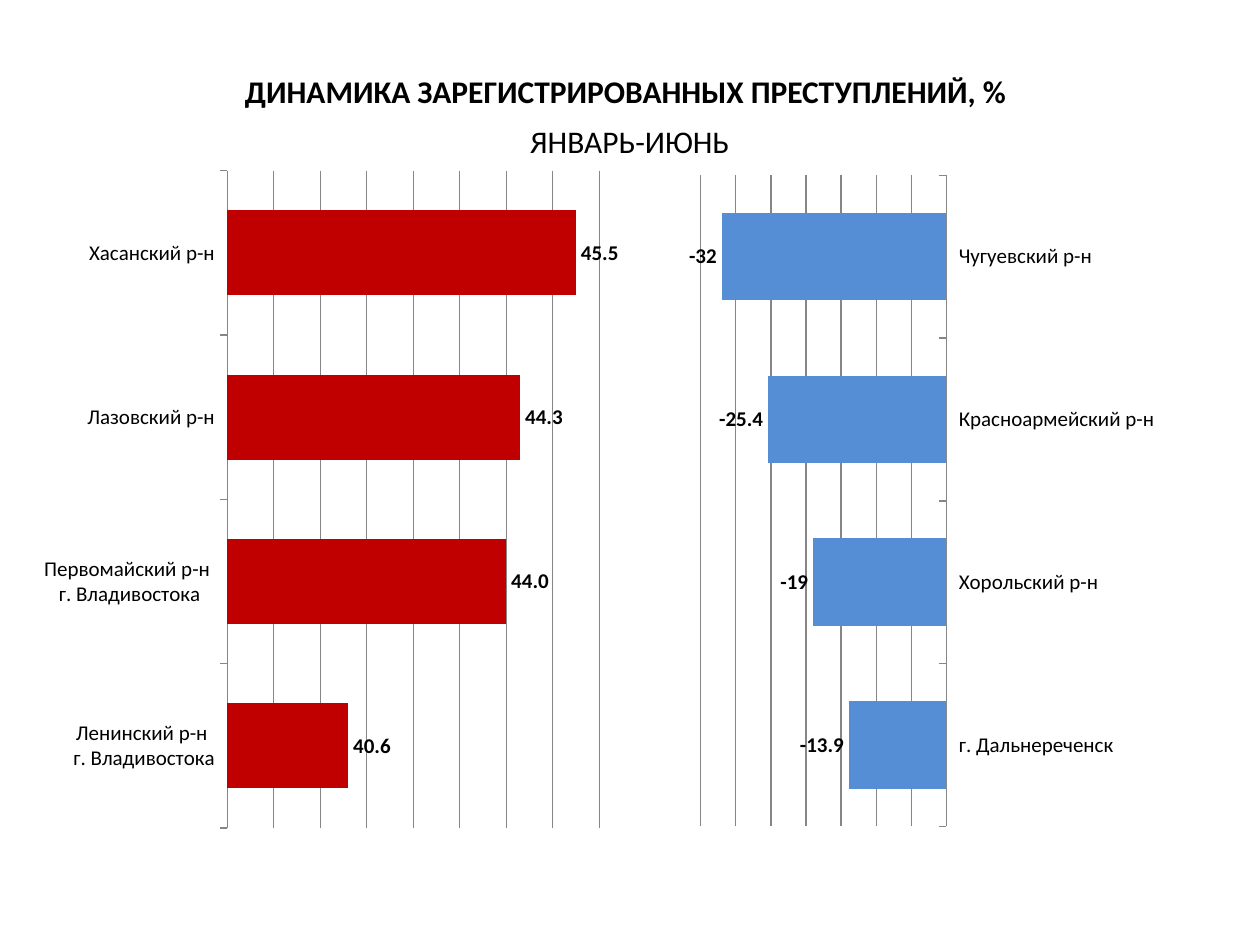
"""Build a slide with two bar charts of registered crime dynamics by district."""
from dataclasses import dataclass

import lxml.etree
import pptx
import pptx.chart.data
import pptx.dml.color
import pptx.enum.chart
import pptx.enum.text
import pptx.oxml.ns
import pptx.util

Cm = pptx.util.Cm
RGB = pptx.dml.color.RGBColor


@dataclass(frozen=True)
class Theme:
    font: str = "Calibri"
    text: RGB = RGB(0x00, 0x00, 0x00)
    grid: RGB = RGB(0x86, 0x86, 0x86)
    growth: RGB = RGB(0xC0, 0x00, 0x00)
    decline: RGB = RGB(0x55, 0x8E, 0xD5)
    heading_size: pptx.util.Pt = pptx.util.Pt(18)
    label_size: pptx.util.Pt = pptx.util.Pt(12)
    line_width: pptx.util.Pt = pptx.util.Pt(0.75)


@dataclass(frozen=True)
class Box:
    left: float
    top: float
    width: float
    height: float

    def lengths(self) -> tuple:
        return Cm(self.left), Cm(self.top), Cm(self.width), Cm(self.height)


@dataclass(frozen=True)
class Dynamics:
    box: Box
    plot: Box
    changes: dict[str, float]
    color: RGB
    scale: tuple[float, float, float]
    gap: int
    overlap: int
    number_format: str
    names_at: pptx.enum.chart.XL_TICK_LABEL_POSITION


THEME = Theme()
NAMES_AT = pptx.enum.chart.XL_TICK_LABEL_POSITION

GROWTH = Dynamics(
    box=Box(0, 3.02, 13.89, 14.1),
    plot=Box(0.33, 0.03, 0.54, 0.94),
    changes={
        "Ленинский р-н \nг. Владивостока": 40.6,
        "Первомайский р-н \nг. Владивостока": 44.0,
        "Лазовский р-н": 44.3,
        "Хасанский р-н": 45.5,
    },
    color=THEME.growth,
    scale=(38, 46, 1),
    gap=93,
    overlap=-49,
    number_format="0.0",
    names_at=NAMES_AT.NEXT_TO_AXIS,
)
DECLINE = Dynamics(
    box=Box(13.11, 3.12, 12.7, 13.82),
    plot=Box(0.08, 0.03, 0.39, 0.95),
    changes={
        "г. Дальнереченск": -13.9,
        "Хорольский р-н": -19,
        "Красноармейский р-н": -25.4,
        "Чугуевский р-н": -32,
    },
    color=THEME.decline,
    scale=(-35, 0, 5),
    gap=86,
    overlap=0,
    number_format="General",
    names_at=NAMES_AT.HIGH,
)


def style_font(font, size: int, bold: bool = False) -> None:
    font.name = THEME.font
    font.size = size
    font.bold = bold
    font.color.rgb = THEME.text


def style_line(line) -> None:
    line.color.rgb = THEME.grid
    line.width = THEME.line_width


def write_heading(holder, box: Box, wording: str, bold: bool) -> None:
    holder.left, holder.top, holder.width, holder.height = box.lengths()
    frame = holder.text_frame
    frame.text = wording
    frame.word_wrap = False
    frame.auto_size = pptx.enum.text.MSO_AUTO_SIZE.NONE
    frame.vertical_anchor = pptx.enum.text.MSO_ANCHOR.MIDDLE
    heading = frame.paragraphs[0]
    heading.alignment = pptx.enum.text.PP_ALIGN.CENTER
    style_font(heading.runs[0].font, THEME.heading_size, bold)


def place_plot(chart, plot: Box) -> None:
    qn = pptx.oxml.ns.qn
    area = chart._chartSpace.find(f".//{qn('c:plotArea')}")
    for old in area.findall(qn("c:layout")):
        area.remove(old)
    layout = lxml.etree.Element(qn("c:layout"))
    area.insert(0, layout)
    manual = lxml.etree.SubElement(layout, qn("c:manualLayout"))
    settings = {
        "layoutTarget": "inner", "xMode": "edge", "yMode": "edge",
        "x": plot.left, "y": plot.top, "w": plot.width, "h": plot.height,
    }
    for tag, setting in settings.items():
        lxml.etree.SubElement(manual, qn(f"c:{tag}")).set("val", str(setting))


def draw_dynamics(slide, dynamics: Dynamics) -> None:
    figures = pptx.chart.data.CategoryChartData(number_format=dynamics.number_format)
    figures.categories = list(dynamics.changes)
    figures.add_series("Series 1", list(dynamics.changes.values()))
    chart = slide.shapes.add_chart(
        pptx.enum.chart.XL_CHART_TYPE.BAR_CLUSTERED, *dynamics.box.lengths(), figures
    ).chart
    chart.has_title = False
    chart.has_legend = False
    style_font(chart.font, THEME.heading_size)
    place_plot(chart, dynamics.plot)

    districts = chart.category_axis
    districts.tick_label_position = dynamics.names_at
    districts.major_tick_mark = pptx.enum.chart.XL_TICK_MARK.OUTSIDE
    districts.has_major_gridlines = False
    style_font(districts.tick_labels.font, THEME.label_size)
    style_line(districts.format.line)

    percent = chart.value_axis
    percent.minimum_scale, percent.maximum_scale, percent.major_unit = dynamics.scale
    percent.visible = False
    percent.has_major_gridlines = True
    style_line(percent.major_gridlines.format.line)

    bars = chart.plots[0]
    bars.vary_by_categories = False
    bars.gap_width = dynamics.gap
    bars.overlap = dynamics.overlap
    series = bars.series[0]
    series.invert_if_negative = False
    series.format.fill.solid()
    series.format.fill.fore_color.rgb = dynamics.color
    labels = series.data_labels
    labels.show_value = True
    labels.position = pptx.enum.chart.XL_LABEL_POSITION.OUTSIDE_END
    labels.number_format = dynamics.number_format
    labels.number_format_is_linked = False
    style_font(labels.font, THEME.label_size, bold=True)


def main() -> None:
    deck = pptx.Presentation()
    deck.slide_width, deck.slide_height = Cm(25.4), Cm(19.05)
    slide = deck.slides.add_slide(deck.slide_layouts.get_by_name("Title Only"))
    write_heading(
        slide.shapes.title, Box(4.6, 1.32, 16.03, 1.02),
        "ДИНАМИКА ЗАРЕГИСТРИРОВАННЫХ ПРЕСТУПЛЕНИЙ, %", bold=True,
    )
    draw_dynamics(slide, DECLINE)
    period = Box(10.41, 2.34, 4.57, 1.02)
    write_heading(
        slide.shapes.add_textbox(*period.lengths()), period, "ЯНВАРЬ-ИЮНЬ", bold=False
    )
    draw_dynamics(slide, GROWTH)
    deck.save("out.pptx")


if __name__ == "__main__":
    main()
